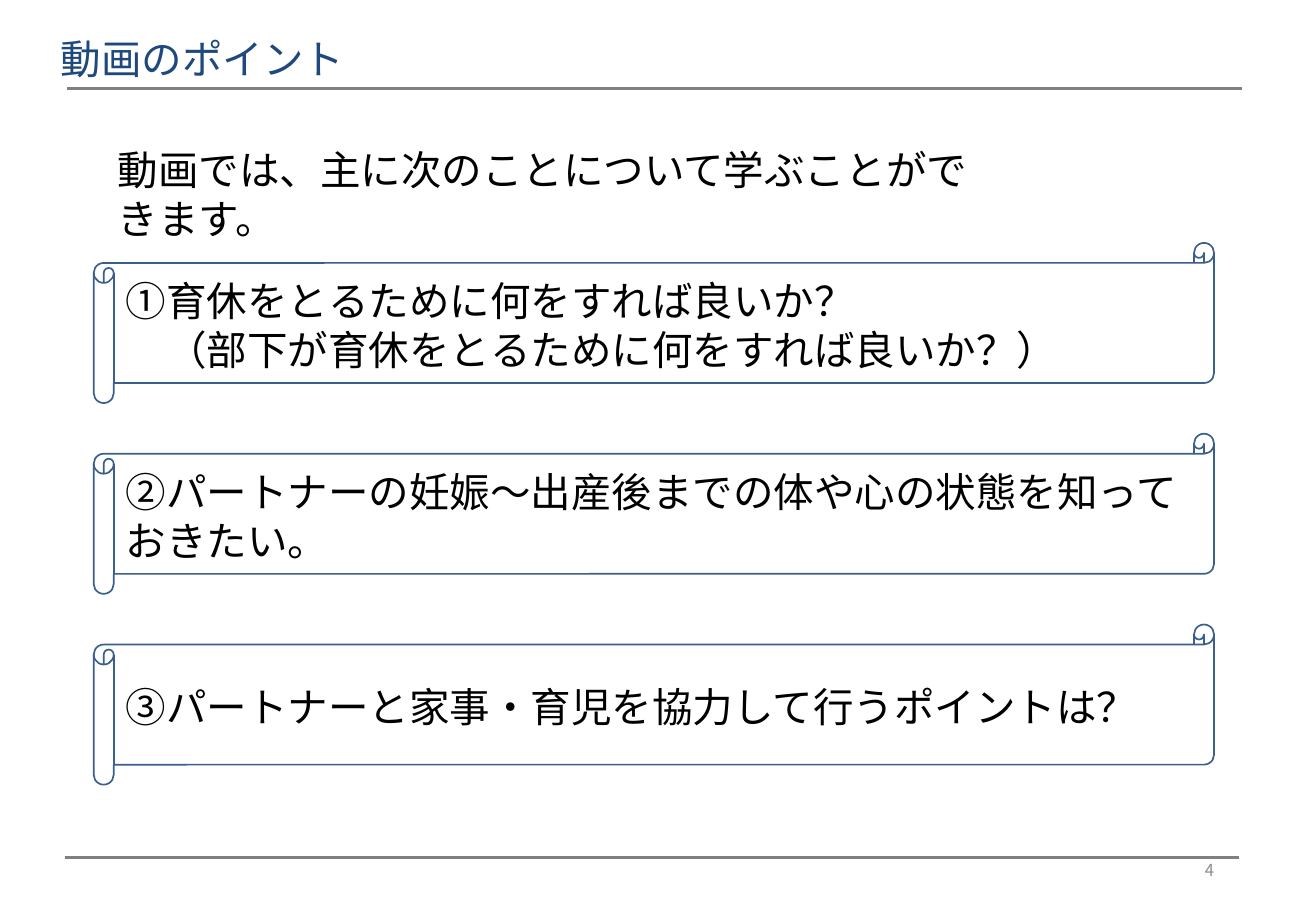
from lxml import etree
from pptx import Presentation
from pptx import util as u
from pptx.dml.color import RGBColor
from pptx.enum import shapes, text
from pptx.oxml import ns

FONT = "Noto Sans CJK JP"
BLACK = RGBColor(0x00, 0x00, 0x00)
NAVY = RGBColor(0x1F, 0x49, 0x7D)
SCROLL_BLUE = RGBColor(0x3A, 0x5F, 0x8C)
RULE_GRAY = RGBColor(0x80, 0x80, 0x80)
NUMBER_GRAY = RGBColor(0x8C, 0x8C, 0x8C)

POINTS = [
    ["①育休をとるために何をすれば良いか？", "　（部下が育休をとるために何をすれば良いか？）"],
    ["②パートナーの妊娠～出産後までの体や心の状態を知っておきたい。"],
    ["③パートナーと家事・育児を協力して行うポイントは？"],
]


def write(frame, lines, size=24, color=BLACK, align=text.PP_ALIGN.LEFT,
          anchor=text.MSO_ANCHOR.TOP):
    """Fill a text frame with one formatted paragraph per line."""
    frame.word_wrap = True
    frame.auto_size = text.MSO_AUTO_SIZE.NONE
    frame.vertical_anchor = anchor
    frame.margin_left = frame.margin_right = u.Cm(0.25)
    frame.margin_top, frame.margin_bottom = u.Cm(0.19), u.Cm(0.13)
    for index, line in enumerate(lines):
        para = frame.add_paragraph() if index else frame.paragraphs[0]
        para.alignment = align
        para.line_spacing = u.Pt(round(size * 1.21))
        span = para.add_run()
        span.text = line
        span.font.size = u.Pt(size)
        span.font.color.rgb = color
        span.font.name = FONT
        east_asian = etree.SubElement(span.font._element, ns.qn("a:ea"))
        east_asian.set("typeface", FONT)


def add_rule(page, left, top, width):
    """Draw a gray horizontal rule."""
    rule = page.shapes.add_connector(
        shapes.MSO_CONNECTOR.STRAIGHT, left, top, left + width, top)
    rule.line.color.rgb = RULE_GRAY
    rule.line.width = u.Pt(2.25)
    etree.SubElement(rule._element.spPr, ns.qn("a:effectLst"))


def add_header(page, left, top, width, height):
    """Place the slide title with the rule below it."""
    title = page.shapes.title
    title.left, title.top, title.width, title.height = left, top, width, height
    write(title.text_frame, ["動画のポイント"], color=NAVY)
    add_rule(page, left + u.Cm(0.38), top + u.Cm(1.34), u.Cm(24.56))


def add_lead(page, left, top, width, height):
    """Place the introductory sentence."""
    box = page.shapes.add_textbox(left, top, width, height)
    write(box.text_frame, ["動画では、主に次のことについて学ぶことができます。"])


def add_points(page, left, top, width, height, pitch):
    """Stack one scroll for each learning point."""
    for index, lines in enumerate(POINTS):
        scroll = page.shapes.add_shape(
            shapes.MSO_SHAPE.HORIZONTAL_SCROLL,
            left, top + index * pitch, width, height)
        scroll.shadow.inherit = False
        scroll.fill.background()
        scroll.line.color.rgb = SCROLL_BLUE
        scroll.line.width = u.Pt(1)
        write(scroll.text_frame, lines, anchor=text.MSO_ANCHOR.MIDDLE)


def add_footer(page, left, top, width, height):
    """Draw the bottom rule and the page number under its right end."""
    add_rule(page, left, top, width)
    number_width = u.Cm(6.2)
    box = page.shapes.add_textbox(
        left + width - number_width - u.Cm(0.28), top - u.Cm(0.28),
        number_width, height)
    write(box.text_frame, ["4"], size=9.8, color=NUMBER_GRAY,
          align=text.PP_ALIGN.RIGHT, anchor=text.MSO_ANCHOR.MIDDLE)


def main():
    """Build the slide and save the deck."""
    deck = Presentation()
    deck.slide_width, deck.slide_height = u.Cm(27.51), u.Cm(19.05)
    page = deck.slides.add_slide(deck.slide_layouts[5])
    add_header(page, u.Cm(1.02), u.Cm(0.51), u.Cm(18.57), u.Cm(1.27))
    add_lead(page, u.Cm(2.21), u.Cm(2.84), u.Cm(18.34), u.Cm(1.27))
    add_points(page, u.Cm(1.96), u.Cm(5.08), u.Cm(23.42), u.Cm(3.35), u.Cm(3.99))
    add_footer(page, u.Cm(1.35), u.Cm(17.93), u.Cm(24.56), u.Cm(1.02))
    deck.save("out.pptx")


if __name__ == "__main__":
    main()
